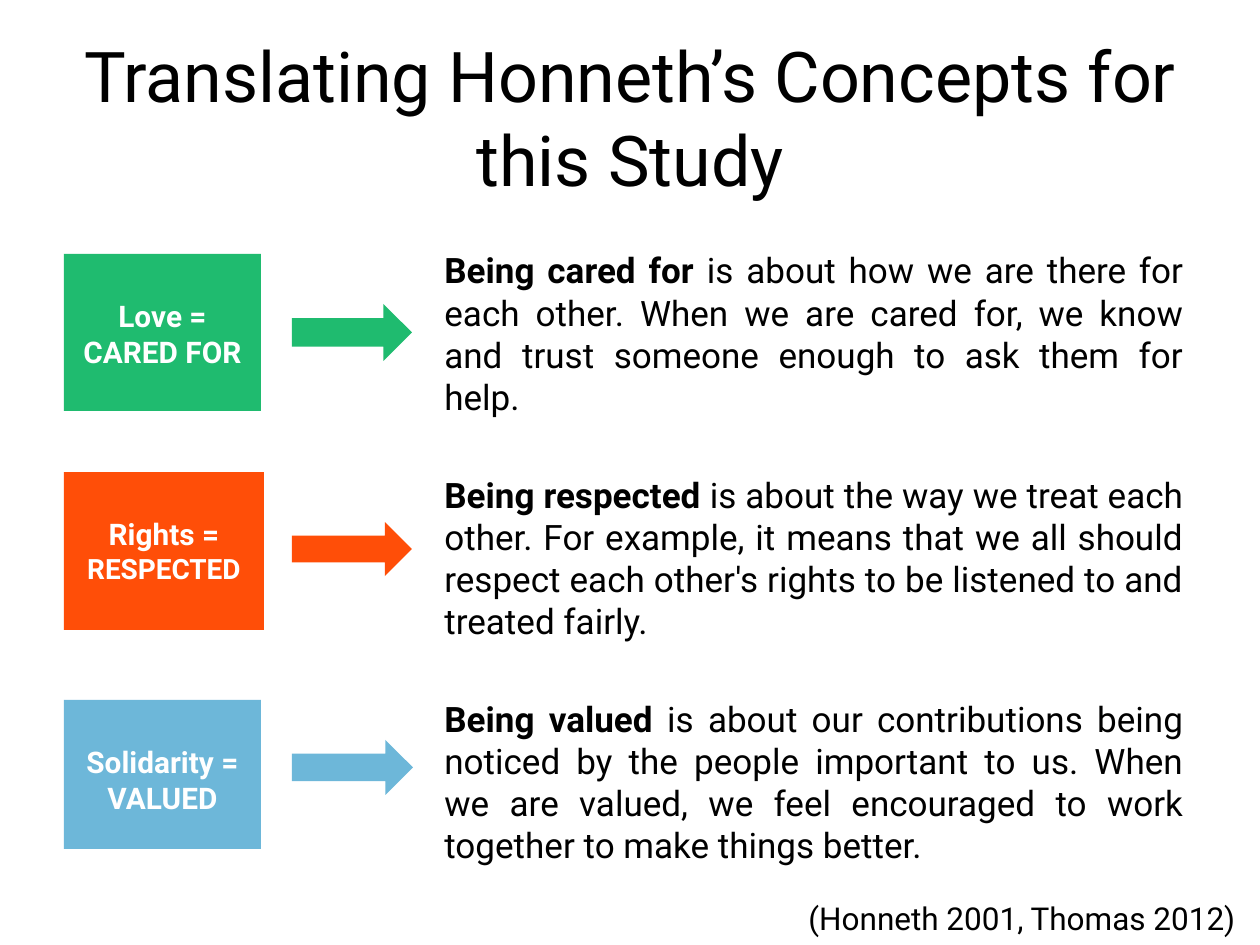
import pptx
import pptx.dml.color
import pptx.enum.shapes
import pptx.enum.text
import pptx.util

RGB = pptx.dml.color.RGBColor
SHAPE = pptx.enum.shapes.MSO_SHAPE
ALIGN = pptx.enum.text.PP_ALIGN
ANCHOR = pptx.enum.text.MSO_ANCHOR
Pt = pptx.util.Pt

BLACK = RGB(0x00, 0x00, 0x00)
WHITE = RGB(0xFF, 0xFF, 0xFF)
GREEN = RGB(0x1F, 0xBB, 0x6F)
ORANGE = RGB(0xFF, 0x4E, 0x08)
BLUE = RGB(0x6D, 0xB7, 0xD9)
SCALE = 914400 // 126


def px(*sizes):
    return [pptx.util.Emu(size * SCALE) for size in sizes]


class Deck:
    font = "Roboto"

    def __init__(self):
        self.show = pptx.Presentation()
        self.show.slide_width, self.show.slide_height = px(1260, 945)
        self.slide = self.show.slides.add_slide(self.show.slide_layouts[5])

    def fill_para(self, para, parts, color, align):
        para.alignment = align
        for text, size, bold in parts:
            run = para.add_run()
            run.text = text
            run.font.name = self.font
            run.font.size = Pt(size)
            run.font.bold = bold
            run.font.color.rgb = color

    def title(self, box, text, size):
        shape = self.slide.shapes.title
        shape.left, shape.top, shape.width, shape.height = px(*box)
        frame = shape.text_frame
        frame.word_wrap = True
        frame.vertical_anchor = ANCHOR.MIDDLE
        self.fill_para(frame.paragraphs[0], [(text, size, False)], BLACK, ALIGN.CENTER)

    def shape(self, kind, box, fill):
        shape = self.slide.shapes.add_shape(kind, *px(*box))
        shape.shadow.inherit = False
        shape.fill.solid()
        shape.fill.fore_color.rgb = fill
        shape.line.fill.background()
        return shape

    def label(self, box, fill, parts):
        frame = self.shape(SHAPE.RECTANGLE, box, fill).text_frame
        frame.word_wrap = True
        frame.vertical_anchor = ANCHOR.TOP
        frame.margin_left, frame.margin_right = px(9, 9)
        frame.margin_top, frame.margin_bottom = px(44, 5)
        self.fill_para(frame.paragraphs[0], parts, WHITE, ALIGN.CENTER)

    def text(self, box, paras, align, top=6, gap=0):
        frame = self.slide.shapes.add_textbox(*px(*box)).text_frame
        frame.word_wrap = True
        frame.margin_top = px(top)[0]
        for index, parts in enumerate(paras):
            para = frame.add_paragraph() if index else frame.paragraphs[0]
            if index:
                para.space_before = Pt(gap)
            self.fill_para(para, parts, BLACK, align)


ROWS = [
    (GREEN, (64, 254, 197, 157), (292, 304, 120, 57),
     [("Love = CARED FOR", 17, True)],
     "Being cared for ",
     "is about how we are there for each other. When we are cared for, "
     "we know and trust someone enough to ask them for help."),
    (ORANGE, (64, 472, 200, 158), (292, 522, 120, 54),
     [("Rights = ", 17, True), ("RESPECTED", 16, True)],
     "Being respected ",
     "is about the way we treat each other. For example, it means that "
     "we all should respect each other's rights to be listened to and "
     "treated fairly."),
    (BLUE, (64, 700, 197, 149), (292, 740, 121, 55),
     [("Solidarity = VALUED", 17, True)],
     "Being valued ",
     "is about our contributions being noticed by the people important "
     "to us. When we are valued, we feel encouraged to work together to "
     "make things better."),
]


def main():
    deck = Deck()
    deck.title((63, 38, 1134, 157), "Translating Honneth’s Concepts for this Study", 40)
    paras = [[(lead, 20, True), (rest, 20, False)] for *_, lead, rest in ROWS]
    deck.text((432, 145, 764, 740), paras, ALIGN.JUSTIFY, top=104, gap=32)
    for color, box, arrow, parts, *_ in ROWS:
        deck.shape(SHAPE.RIGHT_ARROW, arrow, color)
        deck.label(box, color, parts)
    deck.text((551, 893, 697, 50), [[("(Honneth 2001, Thomas 2012)", 18, False)]], ALIGN.RIGHT)
    deck.show.save("out.pptx")


if __name__ == "__main__":
    main()
